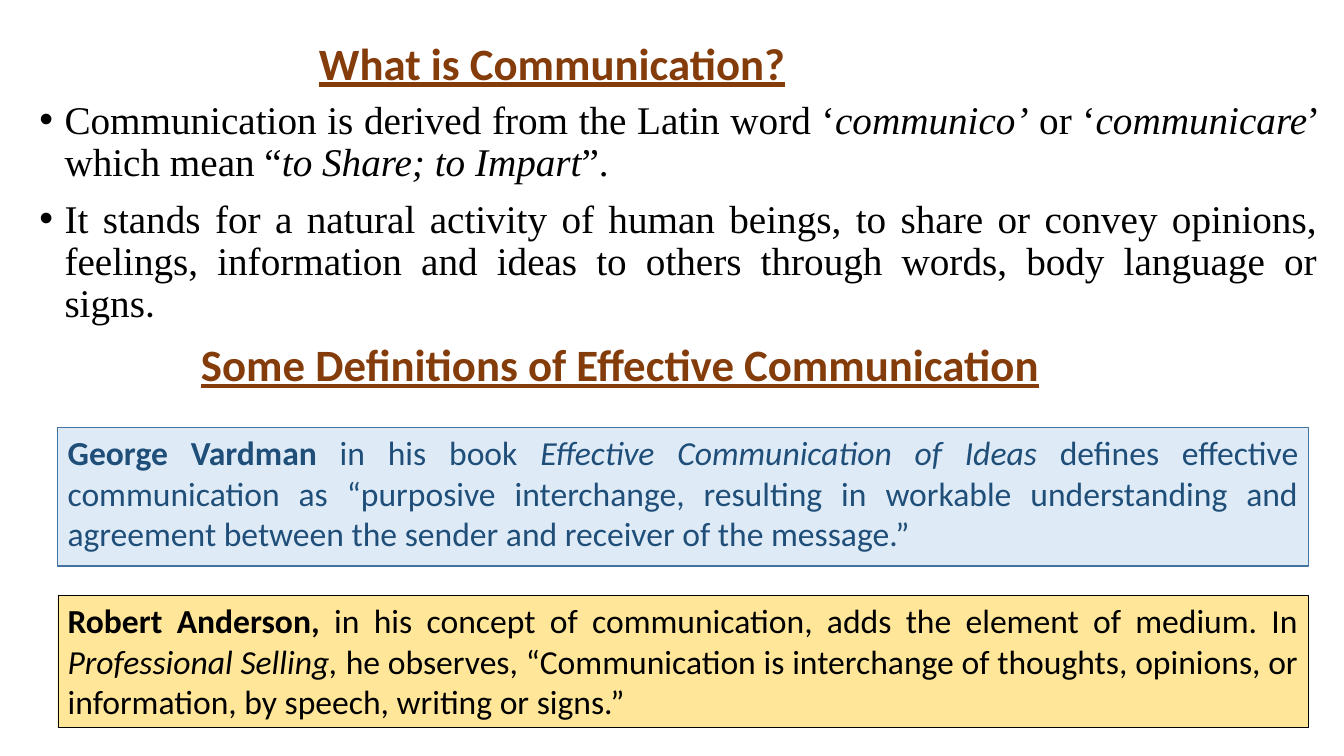
import pptx
import pptx.util
import pptx.dml.color
import pptx.enum.shapes
import pptx.enum.text
import pptx.oxml.ns
from lxml import etree

RGB = pptx.dml.color.RGBColor
Pt = pptx.util.Pt
ALIGN = pptx.enum.text.PP_ALIGN
ANCHOR = pptx.enum.text.MSO_ANCHOR

PX = 9525  # EMU per px, 96 px to the inch
BROWN = RGB(0x84, 0x3C, 0x0B)
BLACK = RGB(0, 0, 0)
NAVY = RGB(0x1F, 0x4E, 0x79)
PALE_BLUE = RGB(0xDE, 0xEB, 0xF7)
BLUE_EDGE = RGB(0x43, 0x73, 0x9E)
YELLOW = RGB(0xFF, 0xE6, 0x99)

BOLD = {"bold": True}
ITALIC = {"italic": True}
PLAIN = {}

POINTS = [
    [("Communication is derived from the Latin word ‘", PLAIN),
     ("communico’", ITALIC),
     (" or ‘", PLAIN),
     ("communicare", ITALIC),
     ("’ which mean “", PLAIN),
     ("to Share; to Impart", ITALIC),
     ("”.", PLAIN)],
    [("It stands for a natural activity of human beings, to share or convey "
      "opinions, feelings, information and ideas to others through words, "
      "body language or signs", PLAIN),
     (".", {"name": "Calibri"})],
]
VARDMAN = [
    ("George Vardman ", BOLD),
    ("in his book ", PLAIN),
    ("Effective Communication of Ideas", ITALIC),
    (" defines effective communication as “purposive interchange, resulting in "
     "workable understanding and agreement between the sender and receiver of "
     "the message.”", PLAIN),
]
ANDERSON = [
    ("Robert Anderson,", BOLD),
    (" in his concept of communication, adds the element of medium. In ", PLAIN),
    ("Professional Selling, ", ITALIC),
    ("he observes, “Communication is interchange of thoughts, opinions, or "
     "information, by speech, writing or signs.”", PLAIN),
]


def emu(box):
    return [v * PX for v in box]


def add_runs(p, runs, name, size, color):
    for text, extra in runs:
        r = p.add_run()
        r.text = text
        for key, value in {"name": name, "size": Pt(size), **extra}.items():
            setattr(r.font, key, value)
        r.font.color.rgb = color


def add_text_box(slide, box, anchor=ANCHOR.TOP):
    tf = slide.shapes.add_textbox(*emu(box)).text_frame
    tf.word_wrap = True
    tf.vertical_anchor = anchor
    return tf


def add_heading(slide, box, text, **paragraph_format):
    tf = add_text_box(slide, box, ANCHOR.MIDDLE)
    p = tf.paragraphs[0]
    for key, value in paragraph_format.items():
        setattr(p, key, value)
    add_runs(p, [(text, {"bold": True, "underline": True})], "Calibri", 32, BROWN)


def add_bullet(p, indent):
    pPr = p._p.get_or_add_pPr()
    pPr.set("marL", str(indent * PX))
    pPr.set("indent", str(-indent * PX))
    for tag, key, value in (("a:buFont", "typeface", "Arial"),
                            ("a:buChar", "char", "•")):
        etree.SubElement(pPr, pptx.oxml.ns.qn(tag)).set(key, value)


def add_points(slide, box, points):
    tf = add_text_box(slide, box)
    for i, runs in enumerate(points):
        p = tf.paragraphs[0] if i == 0 else tf.add_paragraph()
        add_bullet(p, 24)
        p.alignment = ALIGN.JUSTIFY
        p.line_spacing = 0.9
        p.space_before = Pt(10 if i else 0)
        add_runs(p, runs, "Times New Roman", 28, BLACK)


def add_definition(slide, box, runs, fill, edge, edge_width, color):
    sp = slide.shapes.add_shape(pptx.enum.shapes.MSO_SHAPE.RECTANGLE, *emu(box))
    sp.shadow.inherit = False
    sp.fill.solid()
    sp.fill.fore_color.rgb = fill
    sp.line.color.rgb = edge
    sp.line.width = Pt(edge_width)
    tf = sp.text_frame
    tf.word_wrap = True
    tf.vertical_anchor = ANCHOR.TOP
    p = tf.paragraphs[0]
    p.alignment = ALIGN.JUSTIFY
    add_runs(p, runs, "Calibri", 24, color)


def main():
    prs = pptx.Presentation()
    prs.slide_width, prs.slide_height = emu((1280, 720))
    slide = prs.slides.add_slide(prs.slide_layouts[6])
    add_heading(slide, (0, 12, 1052, 101), "What is Communication?",
                alignment=ALIGN.CENTER, line_spacing=0.9)
    add_points(slide, (28, 91, 1236, 224), POINTS)
    add_heading(slide, (182, 316, 920, 61),
                "Some Definitions of Effective Communication")
    add_definition(slide, (55, 407, 1191, 132), VARDMAN,
                   PALE_BLUE, BLUE_EDGE, 1, NAVY)
    add_definition(slide, (55, 567, 1191, 126), ANDERSON,
                   YELLOW, BLACK, 0.25, BLACK)
    prs.save("out.pptx")


if __name__ == "__main__":
    main()
